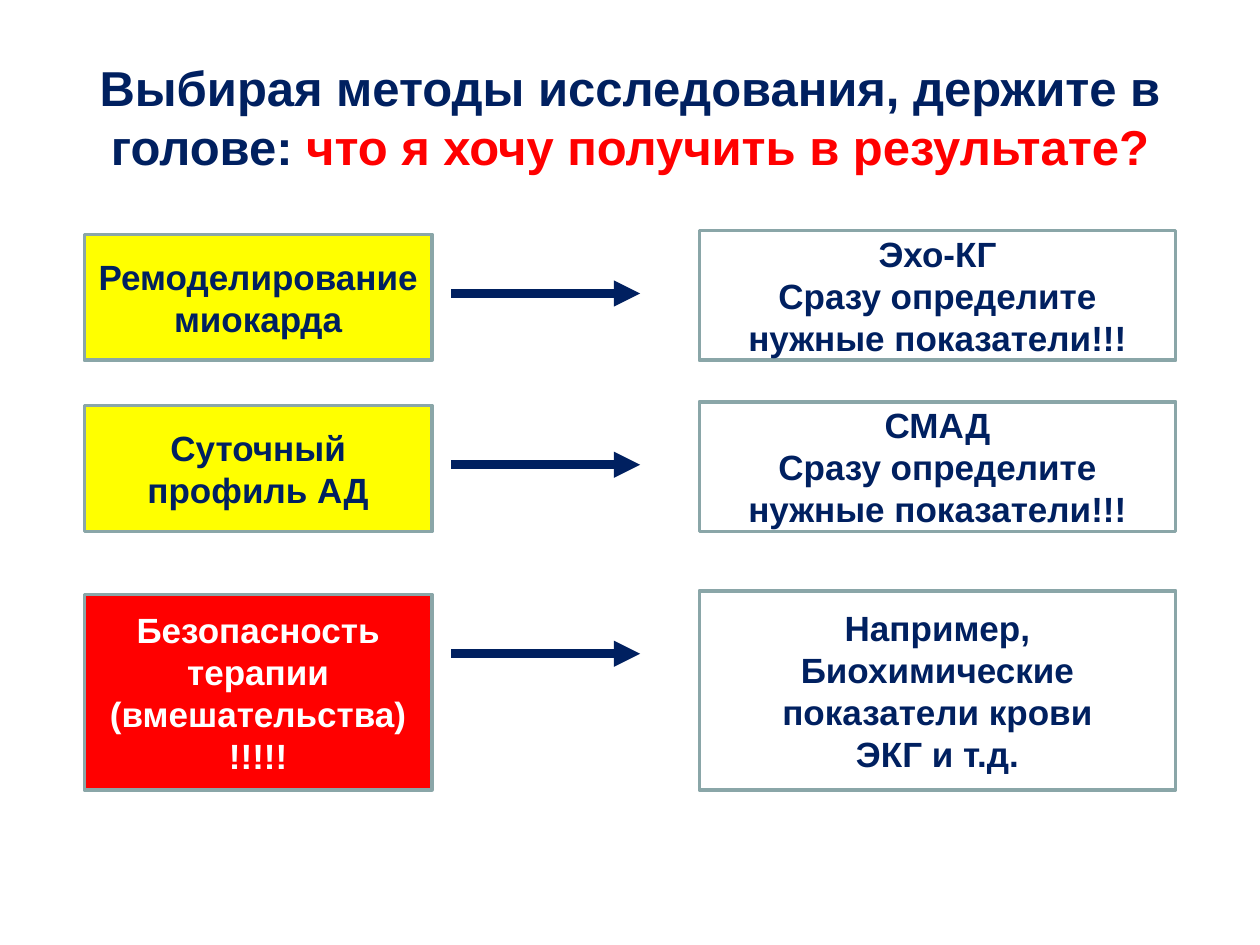
from pptx import Presentation
from pptx.dml.color import RGBColor
from pptx.enum.shapes import MSO_CONNECTOR, MSO_SHAPE
from pptx.enum.text import MSO_ANCHOR, PP_ALIGN
from pptx.oxml.ns import qn
from pptx.util import Pt
from lxml.etree import SubElement

HEX = {
    "navy": "002060",
    "red": "FF0000",
    "yellow": "FFFF00",
    "white": "FFFFFF",
    "edge": "8AA6A8",
}

# Columns, and the rise of each method box above its goal box
GOAL_X, GOAL_W = 48.2, 198.7
WAY_X, WAY_W = 399.6, 272.2
ARROW_X, ARROW_END, ARROW_DROP = 257.8, 365.8, 33.8
RISE = 2.2

HINT = "Сразу определите нужные показатели!!!"

# Top, height, goal fill, goal ink, goal lines, method lines
ROWS = [
    (133.9, 72, "yellow", "navy", ["Ремоделирование миокарда"], ["Эхо-КГ", HINT]),
    (231.8, 72, "yellow", "navy", ["Суточный профиль АД"], ["СМАД", HINT]),
    (339.8, 111.6, "red", "white",
     ["Безопасность терапии (вмешательства)", "!!!!!"],
     ["Например,", "Биохимические показатели крови", "ЭКГ и т.д."]),
]


def tint(name):
    return RGBColor.from_string(HEX[name])


def write(frame, paras, size):
    """Fill a frame with paragraphs, each a list of (text, ink) runs."""
    frame.word_wrap = True
    frame.vertical_anchor = MSO_ANCHOR.MIDDLE
    for i, runs in enumerate(paras):
        para = frame.paragraphs[0] if i == 0 else frame.add_paragraph()
        para.alignment = PP_ALIGN.CENTER
        for text, ink in runs:
            run = para.add_run()
            run.text = text
            font = run.font
            font.name, font.size, font.bold = "Arial", Pt(size), True
            font.color.rgb = tint(ink)


def add_title(slide, runs):
    box = slide.shapes.add_textbox(Pt(36), Pt(21.6), Pt(648), Pt(90))
    write(box.text_frame, [runs], 28)


def add_box(slide, x, y, w, h, fill, ink, lines):
    box = slide.shapes.add_shape(MSO_SHAPE.RECTANGLE, Pt(x), Pt(y), Pt(w), Pt(h))
    box.shadow.inherit = False
    box.fill.solid()
    box.fill.fore_color.rgb = tint(fill)
    box.line.color.rgb = tint("edge")
    box.line.width = Pt(2)
    write(box.text_frame, [[(line, ink)] for line in lines], 20)


def add_arrow(slide, y):
    arrow = slide.shapes.add_connector(
        MSO_CONNECTOR.STRAIGHT, Pt(ARROW_X), Pt(y), Pt(ARROW_END), Pt(y))
    arrow.line.color.rgb = tint("navy")
    arrow.line.width = Pt(5)
    props = arrow.line._get_or_add_ln()
    SubElement(props, qn("a:tailEnd"), type="triangle")
    SubElement(props.getparent(), qn("a:effectLst"))


def main():
    deck = Presentation()
    deck.slide_width, deck.slide_height = Pt(720), Pt(540)
    slide = deck.slides.add_slide(deck.slide_layouts[6])

    # Heading
    add_title(slide, [
        ("Выбирая методы исследования, держите в голове: ", "navy"),
        ("что я хочу получить в результате?", "red"),
    ])

    # Goal, arrow and method in each row
    for top, high, fill, ink, goal, way in ROWS:
        add_box(slide, GOAL_X, top, GOAL_W, high, fill, ink, goal)
        add_arrow(slide, top + ARROW_DROP)
        add_box(slide, WAY_X, top - RISE, WAY_W, high + RISE, "white", "navy", way)

    deck.save("out.pptx")


if __name__ == "__main__":
    main()
